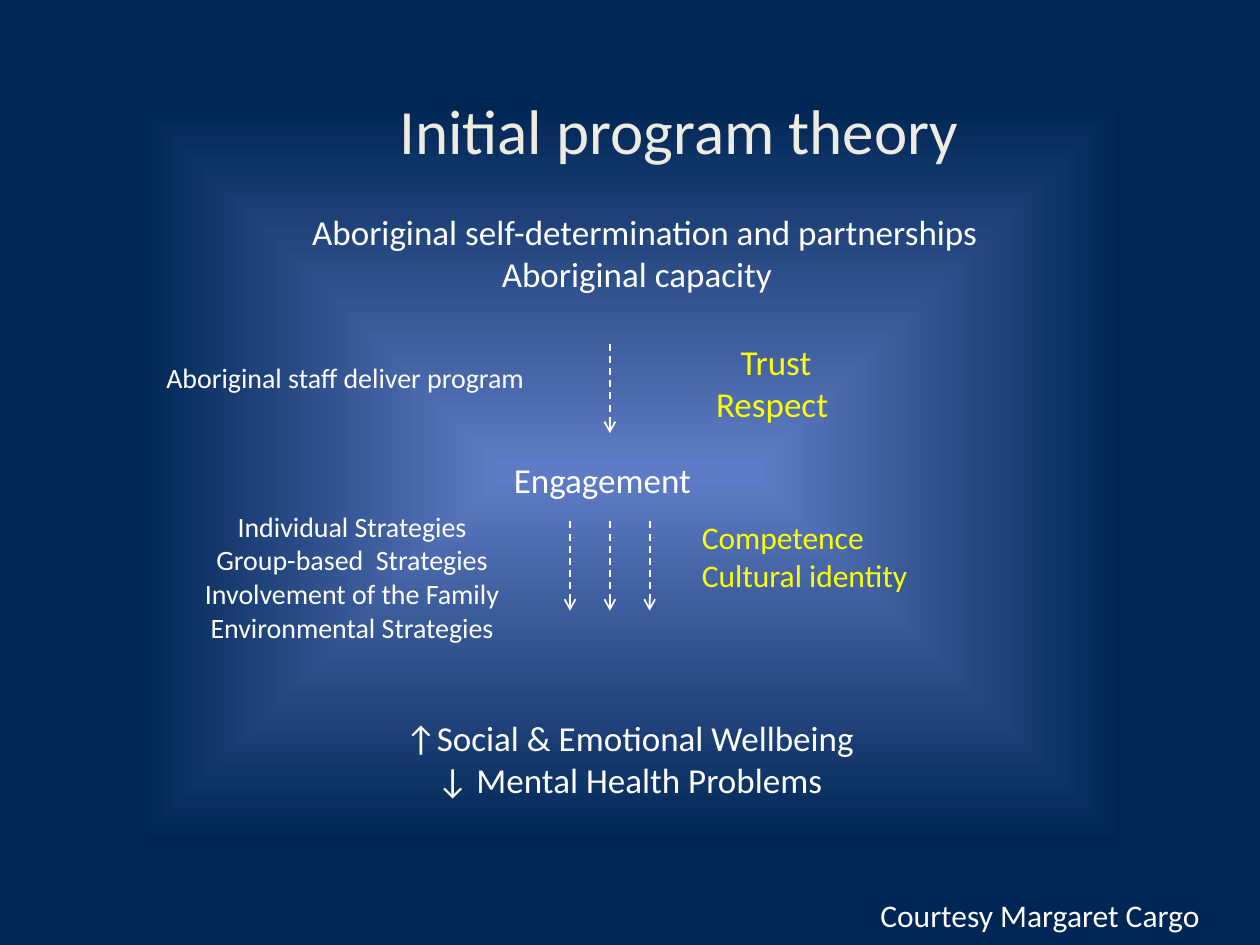
from lxml import etree
from pptx import Presentation
from pptx.dml.color import RGBColor
from pptx.enum.dml import MSO_LINE
from pptx.enum.shapes import MSO_CONNECTOR
from pptx.enum.text import PP_ALIGN
from pptx.oxml.ns import qn
from pptx.util import Pt

LEFT, MID = PP_ALIGN.LEFT, PP_ALIGN.CENTER
DASH, LINE = MSO_LINE.DASH, MSO_CONNECTOR.STRAIGHT
WHITE, GOLD, CREAM = "FFFFFF", "FFFF00", "EEECE1"
ARROW_GAP = 22.75


def tint(color, code):
    color.rgb = RGBColor.from_string(code)


def back(slide):
    fill = slide.background.fill
    fill.gradient()
    for stop, (pos, code) in zip(fill.gradient_stops,
                                 [(0.01, "5E7CC5"), (0.78, "002655")]):
        stop.position = pos
        tint(stop.color, code)
    # Swap the linear ramp for one that spreads from the centre
    lin = next(slide.background._cSld.iter(qn("a:lin")))
    ramp = etree.Element(qn("a:path"), {"path": "shape"})
    etree.SubElement(ramp, qn("a:fillToRect"), dict.fromkeys("ltrb", "50000"))
    lin.getparent().replace(lin, ramp)


def text(slide, box, lines, size=20, code=WHITE, align=MID, wrap=True):
    frame = slide.shapes.add_textbox(*map(Pt, box)).text_frame
    frame.word_wrap = wrap
    for i, line in enumerate(lines):
        para = frame.paragraphs[0] if i == 0 else frame.add_paragraph()
        para.alignment = align
        run = para.add_run()
        run.text = line
        for key, value in {"name": "Calibri", "size": Pt(size)}.items():
            setattr(run.font, key, value)
        tint(run.font.color, code)


def arrow(slide, x, top, high):
    link = slide.shapes.add_connector(LINE, Pt(x), Pt(top), Pt(x), Pt(top + high))
    for key, value in {"width": Pt(1), "dash_style": DASH}.items():
        setattr(link.line, key, value)
    tint(link.line.color, WHITE)
    props = link._element.spPr
    etree.SubElement(props.find(qn("a:ln")), qn("a:tailEnd"), {"type": "arrow"})
    etree.SubElement(props, qn("a:effectLst"))


def head(slide, x, y, wide):
    text(slide, (x + 82, y, 612, 90), ["Initial program theory"], 36, CREAM)
    text(slide, (x + 133, y + 67.5, 471, 55.5),
         ["Aboriginal self-determination and partnerships", "Aboriginal capacity  "])


def trust(slide, x, y, wide):
    text(slide, (x + 88, y + 11.5, 238.5, 26.5),
         ["Aboriginal staff deliver program"], 16, align=LEFT)
    arrow(slide, x + 348.5, y + 5.5, 51)
    text(slide, (x + 399.5, y, 88, 85), ["Trust", "Respect "], code=GOLD)


def engage(slide, x, y, wide):
    text(slide, (x + 286.5, y, 170, 31.5), ["Engagement"], align=LEFT)
    text(slide, (x + 93.5, y + 29, 215.5, 85),
         ["Individual Strategies", "Group-based  Strategies",
          "Involvement of the Family", "Environmental Strategies"], 16)
    for step in (-1, 0, 1):
        arrow(slide, x + 348.5 + step * ARROW_GAP, y + 39.5, 51)
    text(slide, (x + 394, y + 34, 164, 51),
         ["Competence", "Cultural identity"], 18, GOLD, LEFT)


def foot(slide, x, y, wide):
    text(slide, (x + 212.5, y, 294.5, 55.5),
         ["↑Social & Emotional Wellbeing", "↓ Mental Health Problems"])
    text(slide, (x + wide - 224, y + 102.5, 199, 29),
         ["Courtesy Margaret Cargo"], 18, align=LEFT, wrap=False)


def main():
    deck = Presentation()
    deck.slide_width, deck.slide_height = Pt(720), Pt(540)
    slide = deck.slides.add_slide(deck.slide_layouts[6])
    back(slide)
    # Bands from top to bottom
    for band, top in [(head, 49), (trust, 191), (engage, 258.5), (foot, 406)]:
        band(slide, 0, top, 720)
    deck.save("out.pptx")


if __name__ == "__main__":
    main()
